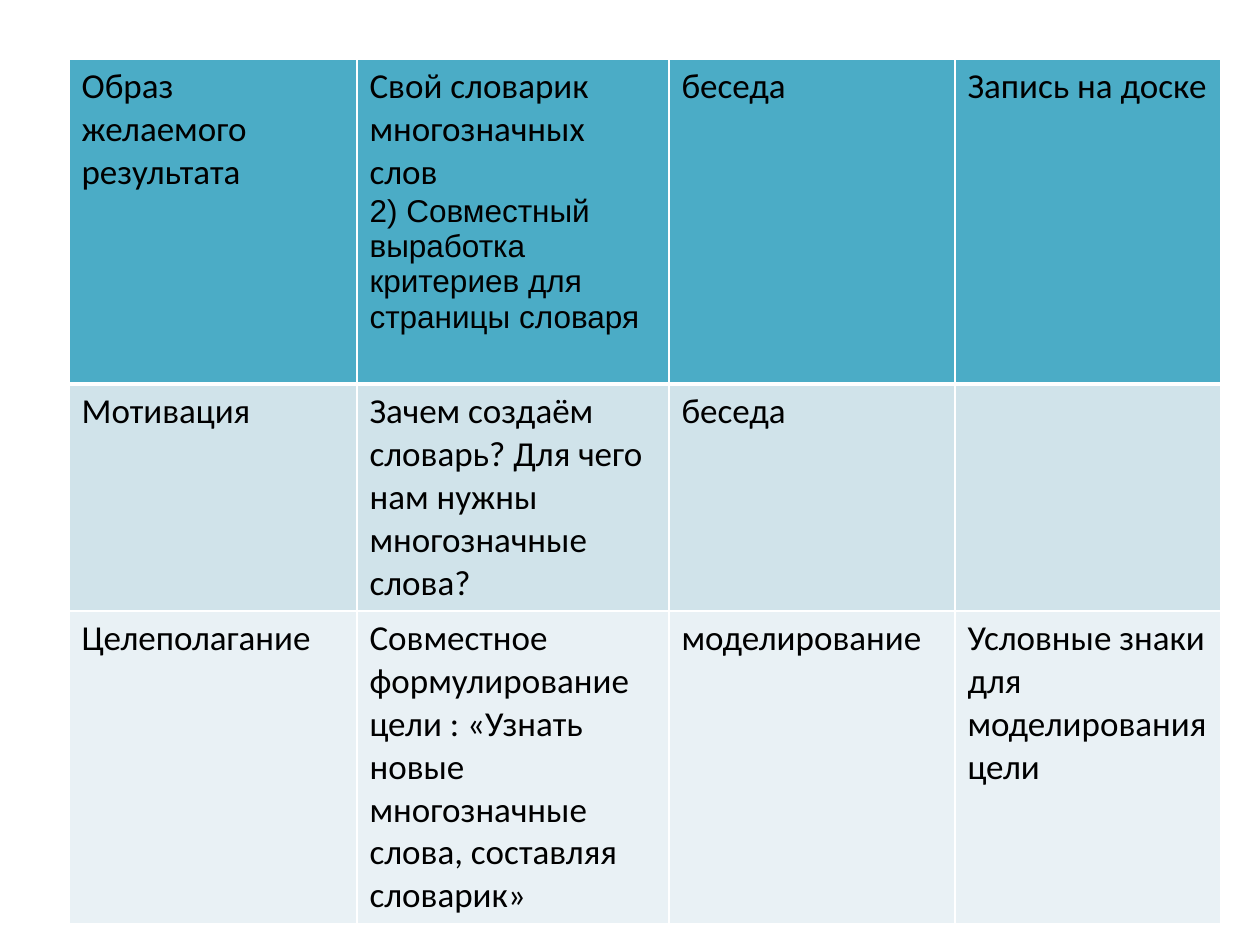
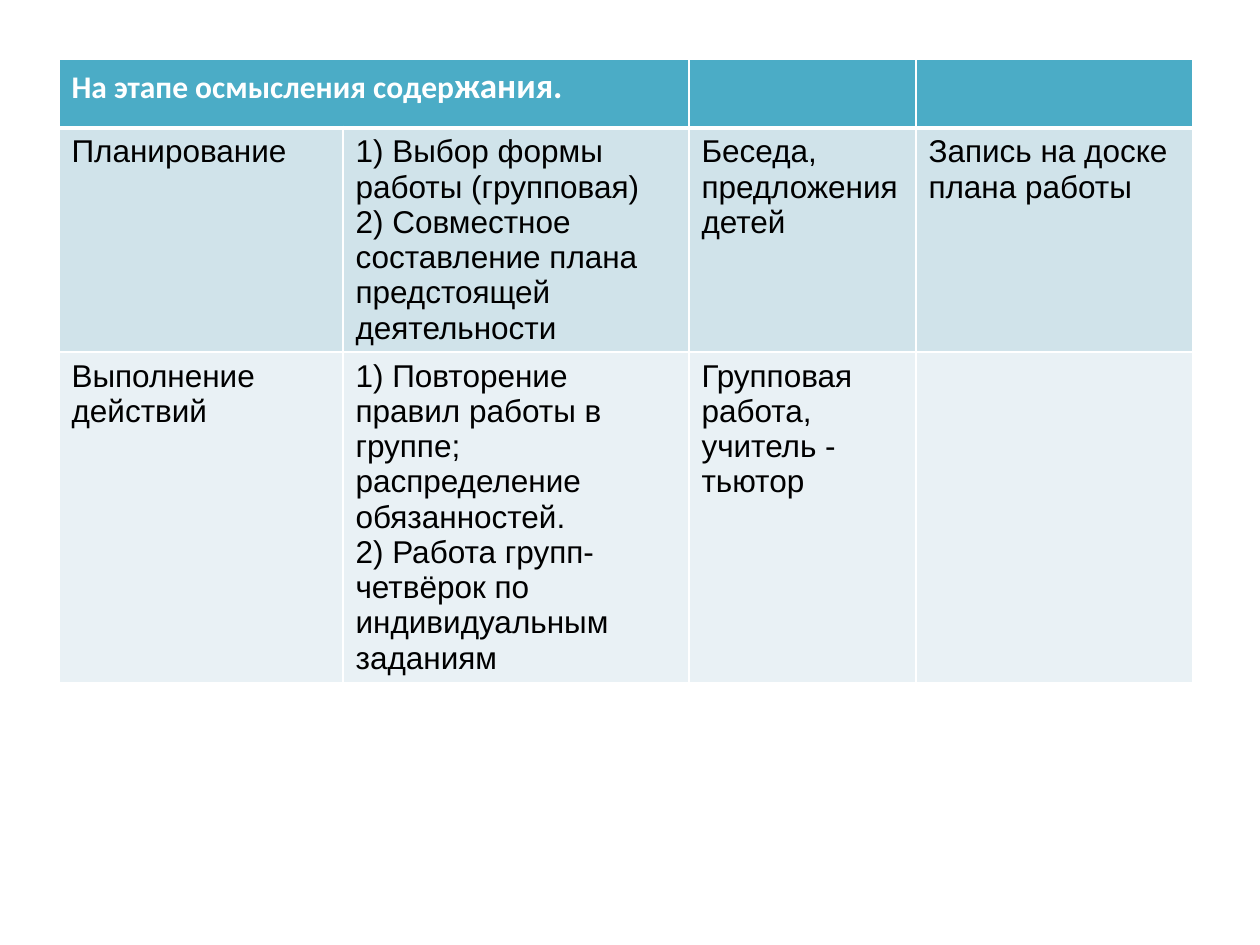
from dataclasses import dataclass
from typing import NamedTuple

from lxml.etree import SubElement
from pptx import Presentation
from pptx.dml.color import RGBColor
from pptx.oxml.ns import qn
from pptx.util import Emu, Pt

PX = 914400 / 126
SLIDE_WIDTH, SLIDE_HEIGHT = 1260, 945
TABLE_TOP = 59

BLACK = RGBColor(0x00, 0x00, 0x00)
WHITE = RGBColor(0xFF, 0xFF, 0xFF)
HEADER_TEAL = RGBColor(0x4B, 0xAC, 0xC6)
ROW_FILLS = [HEADER_TEAL, RGBColor(0xD0, 0xE3, 0xEA), RGBColor(0xE9, 0xF1, 0xF5)]
THIN, THICK = 1, 3


class Phrase(NamedTuple):
    text: str
    font: str = "Calibri"
    size: int = 20
    color: RGBColor = BLACK
    bold: bool = False


Paragraph = list[Phrase]
Cell = list[Paragraph]


@dataclass
class LessonTable:
    left: int
    columns: list[int]
    heights: list[int]
    rows: list[list[Cell]]
    header_span: int = 1


def px(length: int) -> Emu:
    return Emu(round(length * PX))


def calibri(text: str) -> Paragraph:
    return [Phrase(text)]


def arial(text: str) -> Paragraph:
    return [Phrase(text, font="Arial", size=18)]


def write_text(paragraph, text: str, *, font: str, size: int, color: RGBColor, bold: bool) -> None:
    run = paragraph.add_run()
    run.text = text
    run.font.name = font
    run.font.size = Pt(size)
    run.font.color.rgb = color
    run.font.bold = bold


def draw_borders(cell, row: int) -> None:
    widths = {
        "a:lnL": THIN,
        "a:lnR": THIN,
        "a:lnT": THICK if row == 1 else THIN,
        "a:lnB": THICK if row == 0 else THIN,
    }
    properties = cell._tc.get_or_add_tcPr()
    for side, width in widths.items():
        line = SubElement(properties, qn(side), w=str(Pt(width)))
        solid = SubElement(line, qn("a:solidFill"))
        SubElement(solid, qn("a:srgbClr"), val=str(WHITE))


def fill_cell(cell, row: int, content: Cell) -> None:
    draw_borders(cell, row)
    cell.fill.solid()
    cell.fill.fore_color.rgb = ROW_FILLS[row]
    frame = cell.text_frame
    for index, phrases in enumerate(content):
        paragraph = frame.add_paragraph() if index else frame.paragraphs[0]
        for phrase in phrases:
            write_text(paragraph, **phrase._asdict())


def draw_table(slide, lesson: LessonTable) -> None:
    table = slide.shapes.add_table(
        len(lesson.heights), len(lesson.columns), px(lesson.left), px(TABLE_TOP),
        px(sum(lesson.columns)), px(sum(lesson.heights)),
    ).table
    table.first_row = False
    table.horz_banding = False
    for column, width in zip(table.columns, lesson.columns):
        column.width = px(width)
    for row, height in zip(table.rows, lesson.heights):
        row.height = px(height)
    for row, contents in enumerate(lesson.rows):
        for column, content in enumerate(contents):
            fill_cell(table.cell(row, column), row, content)
    if lesson.header_span > 1:
        table.cell(0, 0).merge(table.cell(0, lesson.header_span - 1))


GOAL_SETTING = LessonTable(
    left=69,
    columns=[288, 312, 286, 266],
    heights=[325, 227, 312],
    rows=[
        [
            [calibri("Образ желаемого результата")],
            [
                calibri("Свой словарик многозначных слов"),
                arial("2) Совместный выработка критериев для страницы словаря"),
            ],
            [calibri("беседа")],
            [calibri("Запись на доске")],
        ],
        [
            [calibri("Мотивация")],
            [calibri("Зачем создаём словарь? Для чего нам нужны многозначные слова?")],
            [calibri("беседа")],
            [],
        ],
        [
            [calibri("Целеполагание")],
            [calibri(
                "Совместное формулирование цели : «Узнать новые "
                "многозначные слова, составляя словарик»"
            )],
            [calibri("моделирование")],
            [calibri("Условные знаки для моделирования цели")],
        ],
    ],
)

COMPREHENSION = LessonTable(
    left=59,
    columns=[284, 346, 227, 277],
    heights=[69, 224, 330],
    header_span=2,
    rows=[
        [
            [[
                Phrase("На этапе осмысления содер", size=18, color=WHITE, bold=True),
                Phrase("жания.", color=WHITE, bold=True),
            ]],
            [],
            [],
            [],
        ],
        [
            [arial("Планирование")],
            [
                arial("1) Выбор формы работы (групповая)"),
                arial("2) Совместное составление плана предстоящей деятельности"),
            ],
            [arial("Беседа, предложения детей")],
            [arial("Запись на доске плана работы")],
        ],
        [
            [arial("Выполнение действий")],
            [
                arial("1) Повторение правил работы в группе; распределение обязанностей."),
                arial("2) Работа групп-четвёрок по индивидуальным заданиям"),
            ],
            [arial("Групповая работа, учитель - тьютор")],
            [],
        ],
    ],
)


def main() -> None:
    presentation = Presentation()
    presentation.slide_width = px(SLIDE_WIDTH)
    presentation.slide_height = px(SLIDE_HEIGHT)
    blank = presentation.slide_layouts[6]
    for lesson in (GOAL_SETTING, COMPREHENSION):
        draw_table(presentation.slides.add_slide(blank), lesson)
    presentation.save("out.pptx")


if __name__ == "__main__":
    main()
